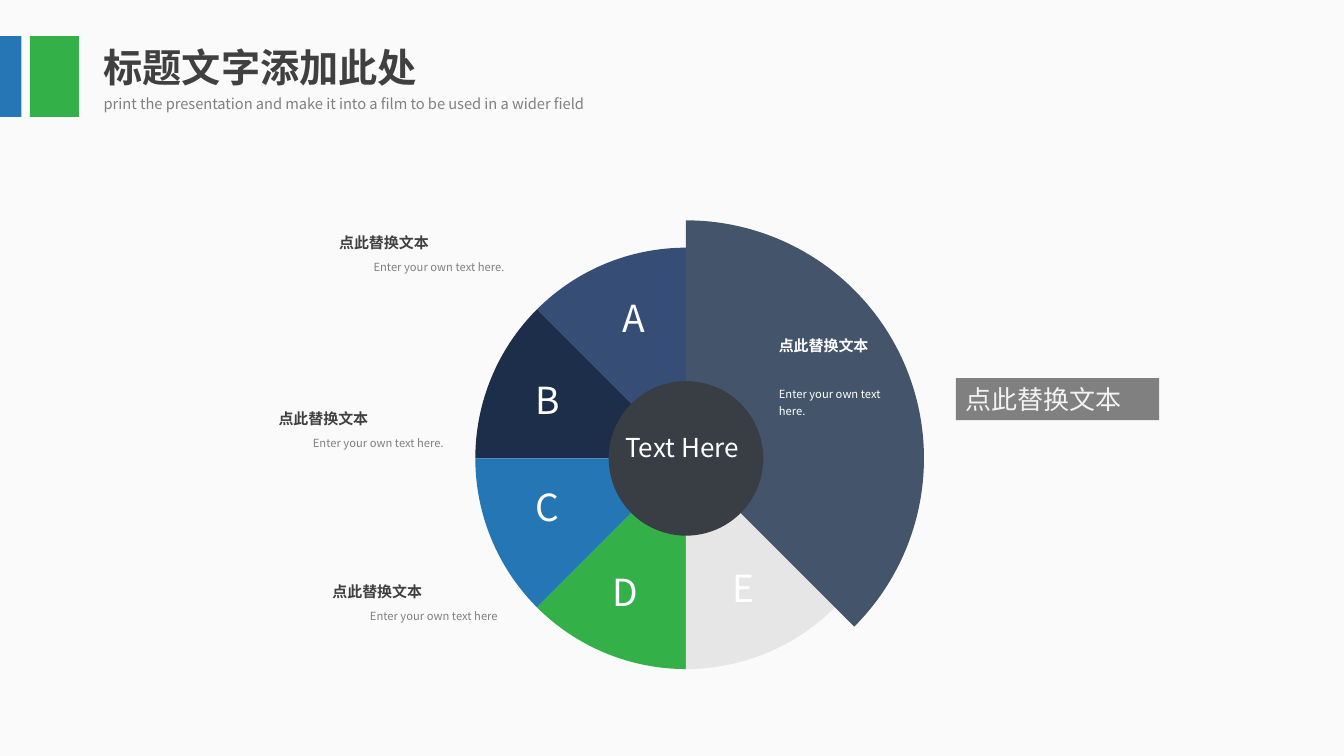
from math import cos, radians, sin, tan

from lxml.etree import SubElement
from pptx import Presentation
from pptx.dml.color import RGBColor
from pptx.enum.shapes import MSO_SHAPE
from pptx.enum.text import MSO_ANCHOR, MSO_AUTO_SIZE, PP_ALIGN
from pptx.oxml.ns import qn
from pptx.util import Pt

FONT = "Noto Sans CJK SC"
WHITE, GREY, DARK = "FFFFFF", "808080", "404040"
GREEN, BLUE = "33B048", "2576B5"
HEADING = "点此替换文本"
CAPTION = "Enter your own text here."
STEP = 45


def color(value):
    return RGBColor.from_string(value)


def paint(shape, fill):
    shape.shadow.inherit = False
    shape.fill.solid()
    shape.fill.fore_color.rgb = color(fill)
    shape.line.fill.background()


def add_block(slide, kind, left, top, width, height, fill):
    shape = slide.shapes.add_shape(kind, Pt(left), Pt(top), Pt(width), Pt(height))
    paint(shape, fill)
    return shape


def write(shape, text, size, ink, bold=False, align=PP_ALIGN.LEFT, spacing=None,
          inset=3.6, wrap=True, anchor=MSO_ANCHOR.TOP):
    frame = shape.text_frame
    frame.word_wrap = wrap
    frame.vertical_anchor = anchor
    frame.margin_left = frame.margin_right = Pt(7.2)
    frame.margin_top = frame.margin_bottom = Pt(inset)
    paragraph = frame.paragraphs[0]
    paragraph.alignment = align
    paragraph.line_spacing = spacing
    run = paragraph.add_run()
    run.text = text
    run.font.size = Pt(size)
    run.font.bold = bold
    run.font.color.rgb = color(ink)
    run.font.name = FONT
    SubElement(run.font._element, qn("a:ea"), typeface=FONT)


def add_text(slide, left, top, width, height, text, size, ink, **style):
    box = slide.shapes.add_textbox(Pt(left), Pt(top), Pt(width), Pt(height))
    write(box, text, size, ink, **style)
    box.text_frame.auto_size = MSO_AUTO_SIZE.SHAPE_TO_FIT_TEXT


def add_header(slide, left, top, height):
    add_block(slide, MSO_SHAPE.RECTANGLE, left, top, 15.3, height, BLUE)
    add_block(slide, MSO_SHAPE.RECTANGLE, left + 21.4, top, 35, height, GREEN)
    add_text(slide, left + 67, top + 1.4, 259, 41, "标题文字添加此处", 28, DARK, bold=True)
    add_text(slide, left + 67, top + 36, 384.5, 21.6,
             "print the presentation and make it into a film to be used in a wider field",
             10.5, GREY, spacing=1.2)


def arc_points(center_x, center_y, radius, start):
    reach = 4 / 3 * tan(radians(STEP / 4))

    def point(angle, along):
        x, y = cos(radians(angle)), sin(radians(angle))
        return (Pt(center_x + radius * (x - along * y)),
                Pt(center_y + radius * (y + along * x)))

    end = start + STEP
    return [point(start, reach), point(end, -reach), point(end, 0)]


def bend_lines(shape):
    outline = shape._element.find(".//" + qn("a:path"))
    lines = outline.findall(qn("a:lnTo"))[1:]
    for first in range(0, len(lines), 3):
        curve = SubElement(outline, qn("a:cubicBezTo"))
        lines[first].addprevious(curve)
        for line in lines[first:first + 3]:
            curve.append(line[0])
            outline.remove(line)


def add_wedge(slide, center_x, center_y, radius, start, end, fill):
    rim = (Pt(center_x + radius * cos(radians(start))),
           Pt(center_y + radius * sin(radians(start))))
    points = [rim]
    for angle in range(start, end, STEP):
        points += arc_points(center_x, center_y, radius, angle)
    builder = slide.shapes.build_freeform(Pt(center_x), Pt(center_y))
    builder.add_line_segments(points, close=True)
    wedge = builder.convert_to_shape()
    bend_lines(wedge)
    paint(wedge, fill)


def add_wheel(slide, center_x, center_y, radius):
    wedges = [
        ("A", 225, "364D76", -52.4, -120.2),
        ("B", 180, "1D2E4B", -114.8, -61.7),
        ("C", 135, BLUE, -114.8, 15.3),
        ("D", 90, GREEN, -59.3, 75.8),
        ("E", 45, "E7E6E6", 26, 72.8),
    ]
    for letter, start, fill, dx, dy in wedges:
        add_wedge(slide, center_x, center_y, radius, start, start + STEP, fill)
    add_wedge(slide, center_x, center_y, 170, 270, 405, "44546A")
    hub = 55.2
    add_block(slide, MSO_SHAPE.OVAL, center_x - hub, center_y - hub, 2 * hub, 2 * hub,
              "393D44")
    add_text(slide, center_x - 50.4, center_y - 12.2, 101, 21, "Text Here", 18.6, WHITE,
             spacing=Pt(12))
    for letter, start, fill, dx, dy in wedges:
        add_text(slide, center_x + dx, center_y + dy, 32.4, 39.6, letter, 26.6, WHITE,
                 wrap=False)
    add_text(slide, center_x + 59.2, center_y - 93.9, 94.3, 23.8, HEADING, 10.7, WHITE,
             bold=True, spacing=Pt(16))
    add_text(slide, center_x + 59.2, center_y - 56.5, 94.3, 31.7, CAPTION, 8, WHITE,
             spacing=Pt(12))


def add_label(slide, left, top, caption):
    add_text(slide, left, top + 20.2, 177.8, 18, caption, 8, GREY,
             align=PP_ALIGN.RIGHT, spacing=Pt(12))
    add_text(slide, left + 45.4, top, 134.6, 23.8, HEADING, 10.7, DARK,
             bold=True, spacing=Pt(16))


def add_tag(slide, left, top, width, height):
    tag = add_block(slide, MSO_SHAPE.RECTANGLE, left, top, width, height, GREY)
    write(tag, HEADING, 18.6, "F2F2F2", inset=0, anchor=MSO_ANCHOR.MIDDLE)


def main():
    presentation = Presentation()
    presentation.slide_width, presentation.slide_height = Pt(960), Pt(540)
    slide = presentation.slides.add_slide(presentation.slide_layouts[6])
    slide.background.fill.solid()
    slide.background.fill.fore_color.rgb = color("FAFAFA")
    add_header(slide, 0, 25.8, 57.8)
    add_wheel(slide, 490, 327.4, 150.5)
    add_label(slide, 189.8, 159.8, CAPTION)
    add_label(slide, 146.5, 285.8, CAPTION)
    add_label(slide, 185, 409.4, CAPTION.rstrip("."))
    add_tag(slide, 682.8, 270.2, 145.2, 30)
    presentation.save("out.pptx")


if __name__ == "__main__":
    main()
